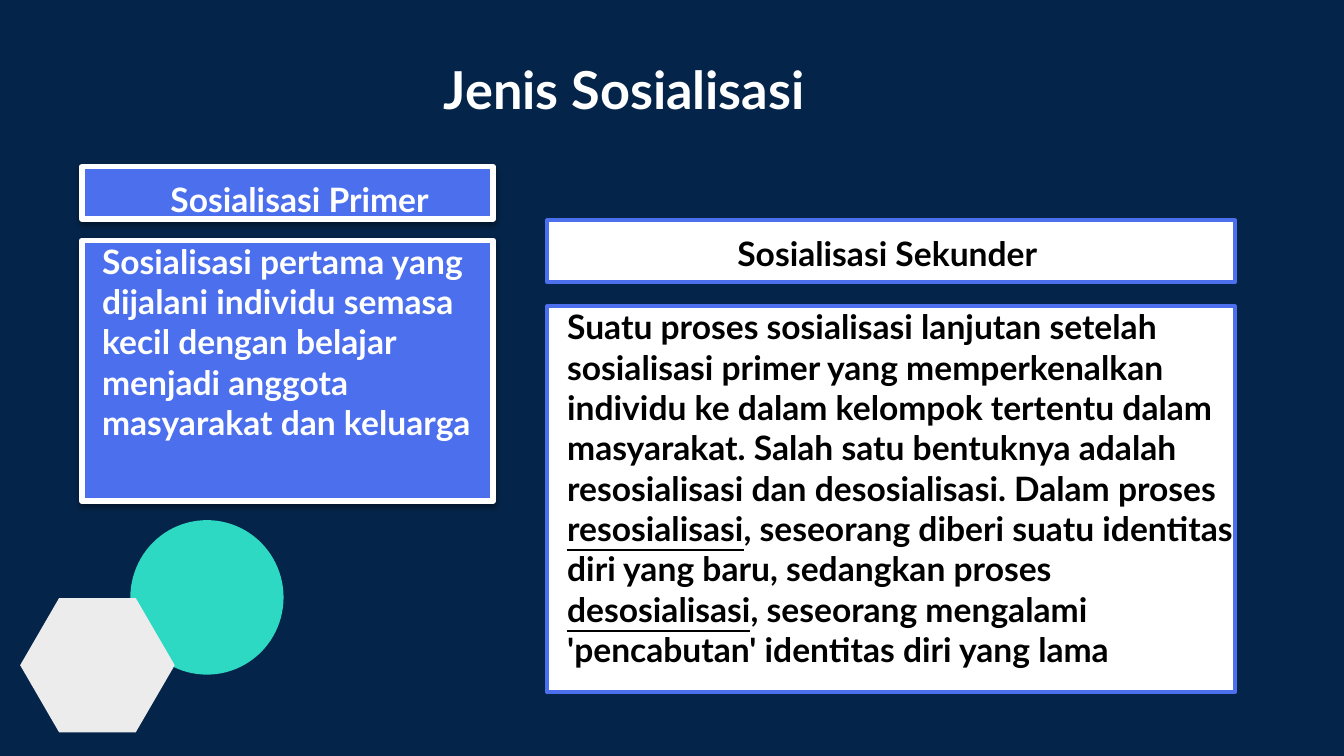
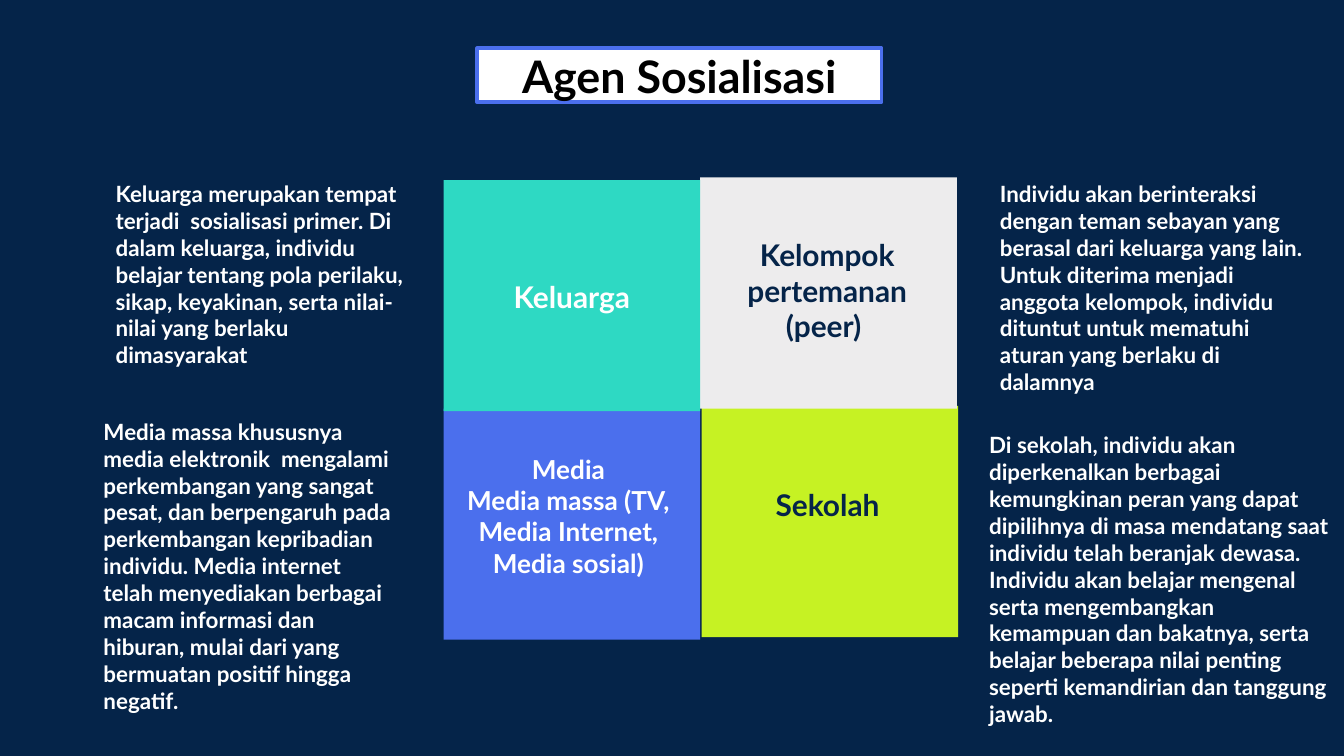
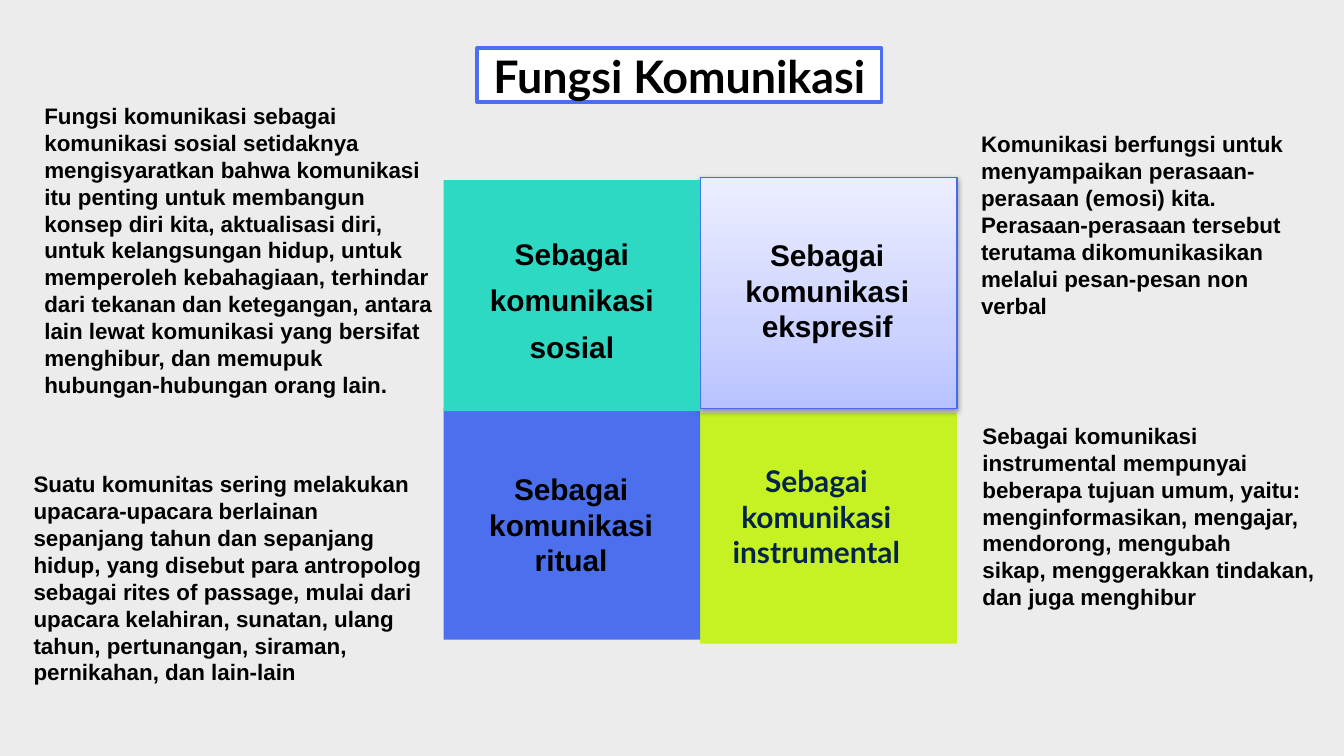
import pptx
import pptx.util
import pptx.dml.color
import pptx.enum.shapes
import pptx.enum.text
import pptx.oxml.ns
import lxml.etree

Inches = pptx.util.Inches
Pt = pptx.util.Pt
RGB = pptx.dml.color.RGBColor
Form = pptx.enum.shapes.MSO_SHAPE
Align = pptx.enum.text.PP_ALIGN
qn = pptx.oxml.ns.qn

NAVY = RGB(0x05, 0x24, 0x49)
BLUE = RGB(0x4B, 0x6F, 0xED)
EDGE = RGB(0x45, 0x6A, 0xEC)
TEAL = RGB(0x2E, 0xD9, 0xC3)
LIME = RGB(0xC6, 0xF2, 0x23)
GREY = RGB(0xED, 0xEC, 0xED)
WHITE = RGB(0xFF, 0xFF, 0xFF)
BLACK = RGB(0x00, 0x00, 0x00)
LILAC = ((0, RGB(0xB9, 0xC2, 0xFF)), (35, RGB(0xCD, 0xD3, 0xFF)), (100, RGB(0xEC, 0xEE, 0xFF)))

TILE = (1.91, 1.72)
LEFT, RIGHT = 3.3, 5.21


def add(node, tag, **attrs):
    return lxml.etree.SubElement(node, qn(tag), {key: str(val) for key, val in attrs.items()})


def write(shape, text, size=12, color=WHITE, font="Lato", align=Align.LEFT, space=None, indent=0):
    frame = shape.text_frame
    frame.word_wrap = True
    frame.auto_size = pptx.enum.text.MSO_AUTO_SIZE.NONE
    frame.vertical_anchor = pptx.enum.text.MSO_ANCHOR.TOP
    frame.margin_left = frame.margin_right = frame.margin_top = frame.margin_bottom = 0
    for index, line in enumerate(text.split("\n")):
        para = frame.add_paragraph() if index else frame.paragraphs[0]
        para.alignment = align
        if space:
            para.line_spacing = space
        if indent:
            props = para._p.get_or_add_pPr()
            props.set("marL", str(Inches(indent)))
            props.set("indent", "0")
        for part, words in enumerate(line.split("_")):
            run = para.add_run()
            run.text = words
            run.font.size = Pt(size)
            run.font.name = font
            run.font.bold = True
            run.font.color.rgb = color
            if part % 2:
                run.font.underline = True


class Deck:
    def __init__(self):
        self.file = pptx.Presentation()
        self.file.slide_width = Inches(10)
        self.file.slide_height = Inches(5.625)

    def start(self, back, ink, font="Lato"):
        self.slide = self.file.slides.add_slide(self.file.slide_layouts[5])
        self.slide.background.fill.solid()
        self.slide.background.fill.fore_color.rgb = back
        self.ink, self.font = ink, font

    def paint(self, shape, fill, line=None, width=2):
        shape.fill.solid()
        shape.fill.fore_color.rgb = fill
        if line is None:
            shape.line.fill.background()
        else:
            shape.line.color.rgb = line
            shape.line.width = Pt(width)

    def title(self, text, place, **look):
        shape = self.slide.shapes.title
        shape.left, shape.top, shape.width, shape.height = map(Inches, place)
        write(shape, text, align=Align.CENTER, **look)
        return shape

    def banner(self, text):
        shape = self.title(text, (3.55, 0.36, 3.01, 0.4), size=24, color=BLACK)
        self.paint(shape, WHITE, BLUE)

    def box(self, place, fill, line=None, width=2, form=Form.RECTANGLE, group=None):
        shapes = (group or self.slide).shapes
        shape = shapes.add_shape(form, *map(Inches, place))
        shape.shadow.inherit = False
        self.paint(shape, fill, line, width)
        return shape

    def shade(self, shape):
        effects = shape.element.spPr.find(qn("a:effectLst"))
        glow = add(effects, "a:outerShdw", blurRad=Pt(3.1), dist=Pt(1.6), dir=5400000, rotWithShape=0)
        add(add(glow, "a:srgbClr", val="000000"), "a:alpha", val=38000)

    def blend(self, shape, stops):
        shape.fill.gradient()
        shape.fill.gradient_angle = 90
        band = shape.element.spPr.find(qn("a:gradFill")).find(qn("a:gsLst"))
        band.clear()
        for place, color in stops:
            add(add(band, "a:gs", pos=place * 1000), "a:srgbClr", val=color)

    def panel(self, head, body, fill, line, width, ink, shade=False, indent=0):
        group = self.slide.shapes.add_group_shape()
        looks = (body, dict(indent=0.15)), (head, dict(align=Align.CENTER, space=1.3, indent=indent))
        for (text, place), look in looks:
            shape = self.box(place, fill, line, width, group=group)
            write(shape, text, size=18, color=ink, **look)
            if shade:
                self.shade(shape)

    def tiles(self, corner):
        self.box((*corner, *TILE), LIME)
        self.box((LEFT, 3.04, *TILE), BLUE)
        peer = self.box((RIGHT, 1.32, *TILE), GREY)
        self.box((LEFT, 1.34, *TILE), TEAL)
        return peer

    def note(self, text, place, **look):
        shape = self.slide.shapes.add_textbox(*map(Inches, place))
        write(shape, text, **{"color": self.ink, "font": self.font, **look})

    def label(self, text, place, **look):
        self.note(text, place, **{"size": 16, "align": Align.CENTER, **look})


def kinds(deck):
    deck.start(NAVY, WHITE)
    deck.title("Jenis Sosialisasi", (1.21, 0.33, 6.87, 0.57), size=28, space=1.2)
    deck.panel(
        ("Sosialisasi Primer", (0.61, 1.24, 3.06, 0.39)),
        ("Sosialisasi pertama yang dijalani individu semasa kecil dengan belajar menjadi "
         "anggota masyarakat dan keluarga", (0.61, 1.79, 3.06, 1.94)),
        BLUE, WHITE, 3, WHITE, shade=True, indent=0.18)
    deck.panel(
        ("Sosialisasi Sekunder ", (4.07, 1.64, 5.12, 0.46)),
        ("Suatu proses sosialisasi lanjutan setelah sosialisasi primer yang memperkenalkan "
         "individu ke dalam kelompok tertentu dalam masyarakat. Salah satu bentuknya adalah "
         "resosialisasi dan desosialisasi. Dalam proses _resosialisasi_, seseorang diberi suatu "
         "identitas diri yang baru, sedangkan proses _desosialisasi_, seseorang mengalami "
         "'pencabutan' identitas diri yang lama", (4.07, 2.28, 5.12, 2.87)),
        WHITE, BLUE, 2, BLACK)
    deck.box((0.97, 3.87, 1.14, 1.15), TEAL, form=Form.OVAL)
    comb = deck.box((0.15, 4.45, 1.15, 1), GREY, form=Form.HEXAGON)
    comb.adjustments[0] = 0.29


def agents(deck):
    deck.start(NAVY, WHITE)
    deck.banner("Agen Sosialisasi")
    deck.tiles((5.22, 3.02))
    deck.label("Keluarga", (3.68, 1.99, 1.15, 0.35), space=1.3)
    deck.label("Kelompok pertemanan (peer) ", (5.46, 1.76, 1.39, 0.81), color=NAVY)
    deck.label("Media\nMedia massa (TV,\nMedia Internet,\nMedia sosial)",
               (3.46, 3.37, 1.54, 0.94), size=14)
    deck.label("Sekolah ", (5.52, 3.62, 1.33, 0.27), color=NAVY)
    deck.note("Media massa khususnya media elektronik  mengalami perkembangan yang sangat pesat, "
              "dan berpengaruh pada perkembangan kepribadian individu. Media internet telah "
              "menyediakan berbagai macam informasi dan hiburan, mulai dari yang bermuatan "
              "positif hingga negatif.", (0.77, 3.11, 2.15, 2.02))
    deck.note("Di sekolah, individu akan diperkenalkan berbagai kemungkinan peran yang dapat "
              "dipilihnya di masa mendatang saat individu telah beranjak dewasa. Individu akan "
              "belajar mengenal serta mengembangkan kemampuan dan bakatnya, serta belajar "
              "beberapa nilai penting seperti kemandirian dan tanggung jawab.",
              (7.36, 3.21, 2.53, 2.02))
    deck.note("Keluarga merupakan tempat terjadi  sosialisasi primer. Di dalam keluarga, individu "
              "belajar tentang pola perilaku, sikap, keyakinan, serta nilai-nilai yang berlaku "
              "dimasyarakat", (0.86, 1.34, 2.18, 1.41))
    deck.note("Individu akan berinteraksi dengan teman sebayan yang berasal dari keluarga yang "
              "lain. Untuk diterima menjadi anggota kelompok, individu dituntut untuk mematuhi "
              "aturan yang berlaku di dalamnya", (7.44, 1.34, 2.37, 1.41))


def roles(deck):
    deck.start(GREY, BLACK, "Arial")
    deck.banner("Fungsi Komunikasi")
    peer = deck.tiles((RIGHT, 3.07))
    deck.paint(peer, GREY, EDGE, 0.75)
    deck.blend(peer, LILAC)
    deck.shade(peer)
    deck.label("Sebagai komunikasi sosial", (3.53, 1.67, 1.45, 1.05), space=1.3)
    deck.label("Sebagai komunikasi ekspresif", (5.46, 1.76, 1.39, 0.81))
    deck.label("Sebagai komunikasi ritual", (3.48, 3.5, 1.54, 0.81))
    deck.label("Sebagai komunikasi instrumental", (5.41, 3.44, 1.33, 0.81), color=NAVY, font="Lato")
    deck.note("Suatu komunitas sering melakukan upacara-upacara berlainan\n"
              "sepanjang tahun dan sepanjang hidup, yang disebut para antropolog\n"
              "sebagai rites of passage, mulai dari upacara kelahiran, sunatan, ulang\n"
              "tahun, pertunangan, siraman, pernikahan, dan lain-lain", (0.25, 3.5, 2.97, 1.62))
    deck.note("Sebagai komunikasi instrumental mempunyai beberapa tujuan umum, yaitu: "
              "menginformasikan, mengajar, mendorong, mengubah\n"
              "sikap, menggerakkan tindakan, dan juga menghibur", (7.31, 3.14, 2.53, 1.41))
    deck.note("Fungsi komunikasi sebagai komunikasi sosial setidaknya mengisyaratkan bahwa "
              "komunikasi itu penting untuk membangun konsep diri kita, aktualisasi diri, untuk "
              "kelangsungan hidup, untuk memperoleh kebahagiaan, terhindar dari tekanan dan "
              "ketegangan, antara lain lewat komunikasi yang bersifat menghibur, dan memupuk "
              "hubungan-hubungan orang lain.", (0.33, 0.76, 2.89, 2.22))
    deck.note("Komunikasi berfungsi untuk menyampaikan perasaan-perasaan (emosi) kita. "
              "Perasaan-perasaan tersebut terutama dikomunikasikan melalui pesan-pesan non "
              "verbal", (7.3, 0.97, 2.37, 1.41))


def main():
    deck = Deck()
    for build in (kinds, agents, roles):
        build(deck)
    deck.file.save("out.pptx")


if __name__ == "__main__":
    main()
